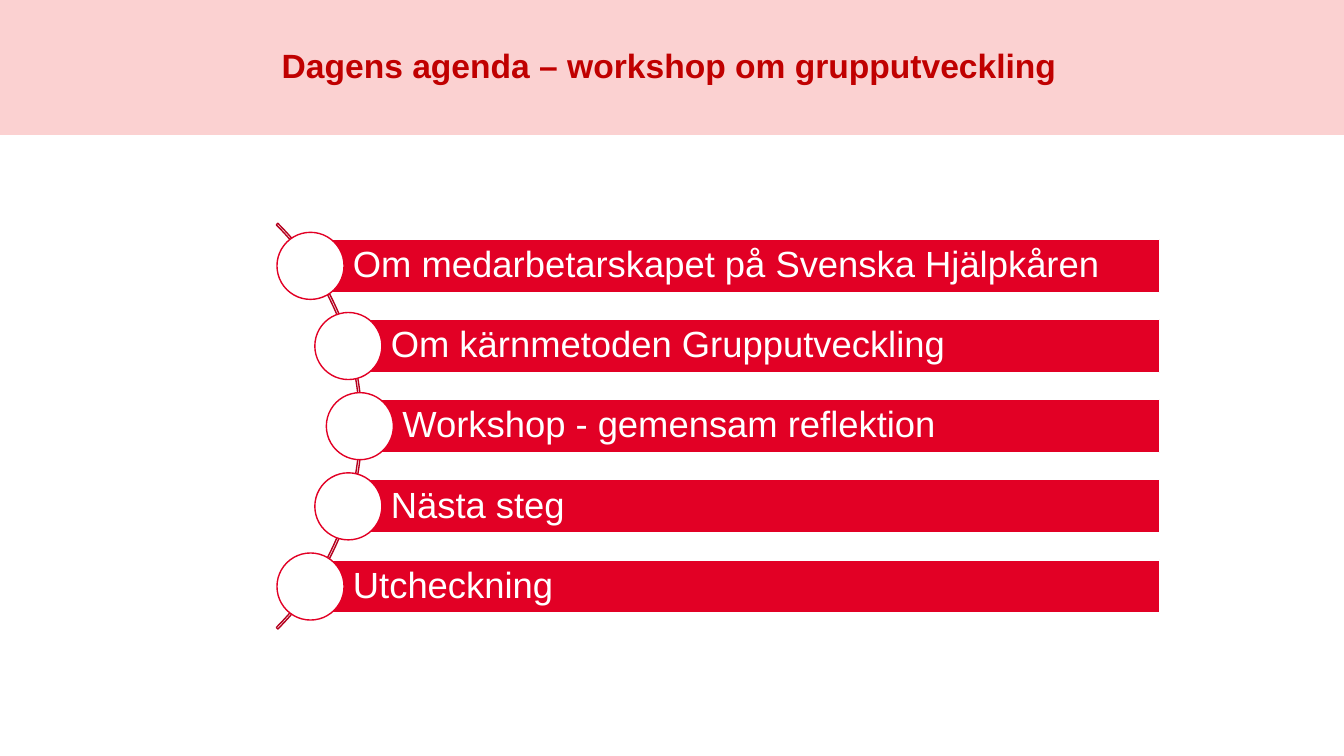
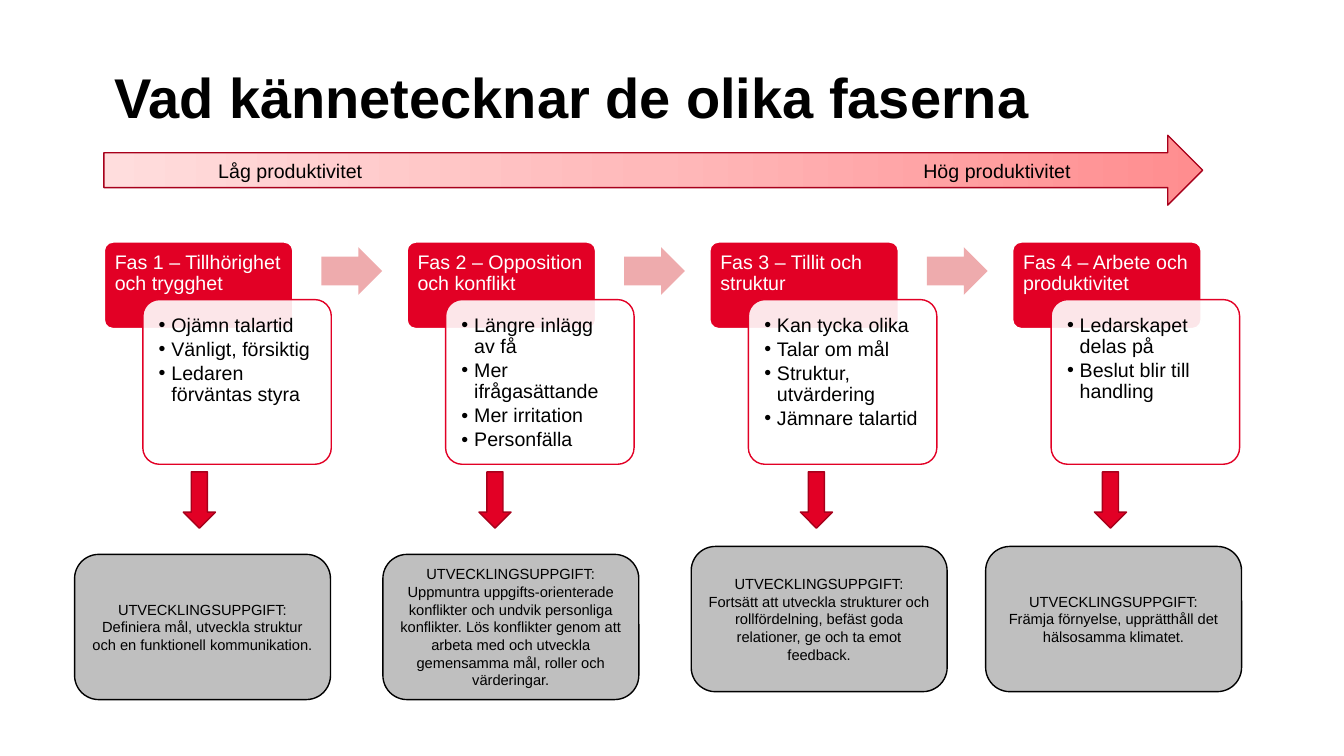
"""Build two workshop slides: the agenda and the phases of group development."""
from copy import deepcopy
from math import sqrt

from lxml import etree
from pptx import Presentation
from pptx.dml.color import RGBColor
from pptx.enum.shapes import MSO_SHAPE
from pptx.enum.text import MSO_ANCHOR, MSO_AUTO_SIZE, PP_ALIGN
from pptx.oxml.ns import qn
from pptx.util import Cm, Pt

RECT, ROUND, OVAL = MSO_SHAPE.RECTANGLE, MSO_SHAPE.ROUNDED_RECTANGLE, MSO_SHAPE.OVAL
ARC, RIGHT, DOWN = MSO_SHAPE.BLOCK_ARC, MSO_SHAPE.RIGHT_ARROW, MSO_SHAPE.DOWN_ARROW
TOP, MIDDLE, BOTTOM = MSO_ANCHOR.TOP, MSO_ANCHOR.MIDDLE, MSO_ANCHOR.BOTTOM
LEFT, CENTER = PP_ALIGN.LEFT, PP_ALIGN.CENTER
NO_FIT = MSO_AUTO_SIZE.NONE

FONT = "Arial"
RED, WHITE, BLACK, GREY = "E20025", "FFFFFF", "000000", "BFBFBF"
EDGE, ARC_EDGE, PALE_RED, BAND, TITLE_RED = "A7001B", "B5001E", "EEABAD", "FBD1D1", "C00000"
GRADIENT = [(0, "FFDDDD"), (0.5, "FFB9BA"), (1, "FF8D8F")]
INSETS = (0.25, 0.13, 0.25, 0.13)
TITLE_ONLY = 5

AGENDA = [
    "Om medarbetarskapet på Svenska Hjälpkåren",
    "Om kärnmetoden Grupputveckling",
    "Workshop - gemensam reflektion",
    "Nästa steg",
    "Utcheckning",
]
PHASES = [
    ("Fas 1 – Tillhörighet och trygghet",
     ["Ojämn talartid", "Vänligt, försiktig", "Ledaren förväntas styra"]),
    ("Fas 2 – Opposition och konflikt",
     ["Längre inlägg av få", "Mer ifrågasättande", "Mer irritation", "Personfälla"]),
    ("Fas 3 – Tillit och struktur",
     ["Kan tycka olika", "Talar om mål", "Struktur, utvärdering", "Jämnare talartid"]),
    ("Fas 4 – Arbete och produktivitet",
     ["Ledarskapet delas på", "Beslut blir till handling"]),
]
TASKS = [
    (4.62, 1.88, 13.97, "Definiera mål, utveckla struktur och en funktionell kommunikation."),
    (12.07, 9.65, 13.97, "Uppmuntra uppgifts-orienterade konflikter och undvik personliga "
     "konflikter. Lös konflikter genom att arbeta med och utveckla gemensamma mål, "
     "roller och värderingar."),
    (20.17, 17.42, 13.77, "Fortsätt att utveckla strukturer och rollfördelning, befäst goda "
     "relationer, ge och ta emot feedback."),
    (27.58, 24.84, 13.77, "Främja förnyelse, upprätthåll det hälsosamma klimatet."),
]


def colour(value):
    """Turn a hex string into a colour."""
    return RGBColor.from_string(value)


def add_box(page, kind, left, top, width, height, fill=None, line=None, adjust=()):
    """Add a preset shape, measured in centimetres."""
    box = page.shapes.add_shape(kind, Cm(left), Cm(top), Cm(width), Cm(height))
    box.shadow.inherit = False
    if fill:
        box.fill.solid()
        box.fill.fore_color.rgb = colour(fill)
    else:
        box.fill.background()
    if line:
        box.line.color.rgb = colour(line)
        box.line.width = Pt(1)
    else:
        box.line.fill.background()
    for index, value in enumerate(adjust):
        box.adjustments[index] = value
    return box


def add_bullet(para):
    """Give a paragraph a hanging bullet."""
    properties = para._p.get_or_add_pPr()
    properties.set("marL", str(Cm(0.32)))
    properties.set("indent", str(-Cm(0.32)))
    etree.SubElement(properties, qn("a:buFont"), typeface=FONT)
    etree.SubElement(properties, qn("a:buChar"), char="•")


def add_tab(para, position):
    """Give a paragraph one left tab stop."""
    tabs = etree.SubElement(para._p.get_or_add_pPr(), qn("a:tabLst"))
    etree.SubElement(tabs, qn("a:tab"), pos=str(Cm(position)), algn="l")


def write(box, lines, size, ink, align=LEFT, anchor=MIDDLE, insets=INSETS,
          spacing=0.9, after=0, bold=False, bullets=False, tab=None):
    """Fill a shape with equally formatted paragraphs."""
    frame = box.text_frame
    frame.word_wrap = True
    frame.auto_size = NO_FIT
    frame.vertical_anchor = anchor
    frame.margin_left, frame.margin_top, frame.margin_right, frame.margin_bottom = map(Cm, insets)
    for index, line in enumerate(lines):
        para = frame.add_paragraph() if index else frame.paragraphs[0]
        para.text = line
        para.alignment = align
        para.line_spacing = spacing
        para.space_before = Pt(0)
        para.space_after = Pt(after)
        if bullets:
            add_bullet(para)
        if tab:
            add_tab(para, tab)
        para.font.name = FONT
        para.font.size = Pt(size)
        para.font.bold = bold
        para.font.color.rgb = colour(ink)


def add_page(deck, title, left, top, width, height, size, ink, **style):
    """Add a slide with its title placeholder moved and formatted."""
    page = deck.slides.add_slide(deck.slide_layouts[TITLE_ONLY])
    box = page.shapes.title
    box.left, box.top, box.width, box.height = map(Cm, (left, top, width, height))
    write(box, [title], size, ink, bold=True, **style)
    return page


def add_agenda(page, center_x, center_y, radius, right):
    """Place the agenda bars and their dots along an arc."""
    pitch, bar, dot, arc = 2.02, 1.34, 1.69, 7.23
    add_box(page, ARC, center_x - arc, center_y - arc, 2 * arc, 2 * arc,
            line=ARC_EDGE, adjust=(189, 27, 0.0038))
    for index, item in enumerate(AGENDA):
        offset = (index - (len(AGENDA) - 1) / 2) * pitch
        x = center_x + sqrt(radius ** 2 - offset ** 2)
        y = center_y + offset
        row = add_box(page, RECT, x, y - bar / 2, right - x, bar, RED, WHITE)
        write(row, [item], 26, WHITE, insets=(1.07, 0.17, 0.17, 0.17))
        add_box(page, OVAL, x - dot / 2, y - dot / 2, dot, dot, WHITE, RED)


def add_phase(page, left, top, heading, traits):
    """Place a phase heading with its overlapping list of traits."""
    card = add_box(page, ROUND, left, top, 4.75, 2.18, RED, WHITE, (0.1,))
    write(card, [heading], 14, WHITE, anchor=TOP, insets=(0.2, 0.2, 0.05, 0.1))
    panel = add_box(page, ROUND, left + 0.97, top + 1.45, 4.75, 4.15, WHITE, RED, (0.1,))
    tint = panel.element.spPr.find(".//" + qn("a:srgbClr"))
    etree.SubElement(tint, qn("a:alpha"), val="90000")
    write(panel, traits, 14, BLACK, anchor=TOP, insets=(0.28,) * 4, after=2, bullets=True)


def add_phases(page, left, top, pitch):
    """Place the phases in a row with arrows between them."""
    for index, (heading, traits) in enumerate(PHASES):
        x = left + index * pitch
        add_phase(page, x, top, heading, traits)
        if index < len(PHASES) - 1:
            add_box(page, RIGHT, x + 5.47, top + 0.13, 1.53, 1.2, PALE_RED, adjust=(0.6, 0.5))


def add_productivity(page, left, top, width, height):
    """Place the shaded arrow from low to high productivity."""
    arrow = add_box(page, RIGHT, left, top, width, height, line=EDGE)
    arrow.fill.gradient()
    arrow.fill.gradient_angle = 0
    stop_list = arrow.element.spPr.find(".//" + qn("a:gsLst"))
    stop_list.append(deepcopy(stop_list[0]))
    for stop, (position, value) in zip(arrow.fill.gradient_stops, GRADIENT):
        stop.position = position
        stop.color.rgb = colour(value)
    write(arrow, ["Låg produktivitet\tHög produktivitet"], 14, BLACK,
          insets=(2.88, 0.13, 0.25, 0.13), spacing=1, tab=17.77)


def add_task(page, left, top, task):
    """Place one development task."""
    box = add_box(page, ROUND, left, top, 6.45, 3.66, GREY, BLACK)
    write(box, ["UTVECKLINGSUPPGIFT:", task], 10.5, BLACK, align=CENTER, spacing=1)


def main():
    """Build and save the deck."""
    deck = Presentation()
    deck.slide_width, deck.slide_height = Cm(33.87), Cm(19.05)

    page = add_page(deck, "Dagens agenda – workshop om grupputveckling", 0, 0, 33.87, 3.4,
                    24, TITLE_RED, align=CENTER, insets=(0.1, 0.13, 0.25, 0.13))
    page.shapes.title.fill.solid()
    page.shapes.title.fill.fore_color.rgb = colour(BAND)
    add_agenda(page, 1.89, 10.74, 7.18, 29.23)

    page = add_page(deck, "Vad kännetecknar de olika faserna", 2.63, 0.76, 28.63, 2.67,
                    40, BLACK, anchor=BOTTOM)
    add_phases(page, 2.63, 6.1, 7.63)
    add_productivity(page, 2.62, 3.41, 27.69, 1.76)
    for arrow_left, left, top, task in TASKS:
        add_box(page, DOWN, arrow_left, 11.89, 0.81, 1.42, RED, EDGE)
        add_task(page, left, top, task)

    deck.save("out.pptx")


if __name__ == "__main__":
    main()
